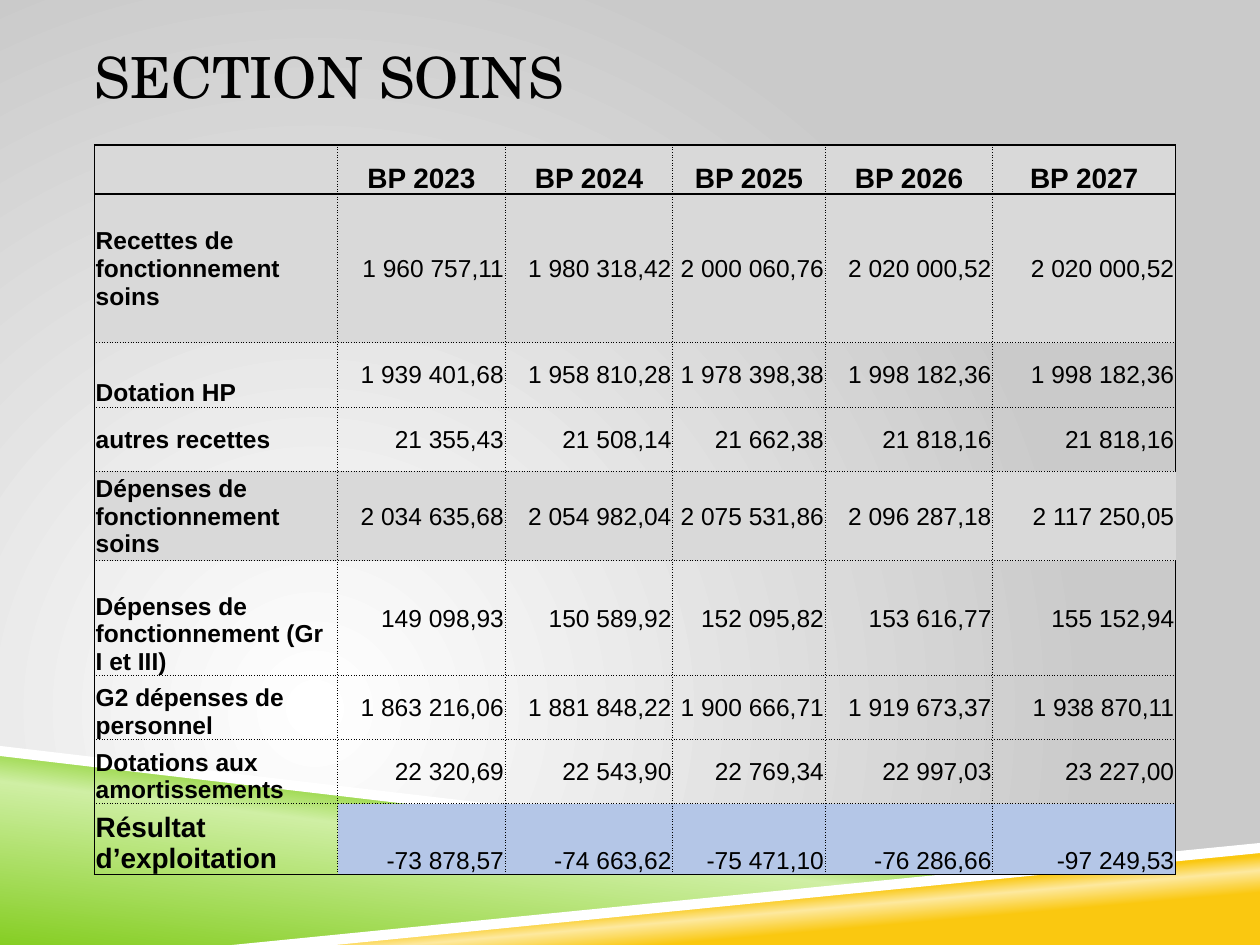
from lxml import etree
from pptx import Presentation
from pptx import util as u
from pptx.dml.color import RGBColor
from pptx.enum import text
from pptx.oxml import ns

COLORS = {
    "ink": "000000", "white": "FFFFFF", "edge": "CACACA",
    "green": "86CE24", "light_green": "CFEFA4",
    "gold": "FAC810", "light_gold": "FDE99F",
    "total": "D9D9D9", "result": "B4C6E7",
}
ANCHORS = {"m": text.MSO_ANCHOR.MIDDLE, "b": text.MSO_ANCHOR.BOTTOM}
ALIGN = text.PP_ALIGN

GREEN_STOPS = [(0, "green"), (52, "light_green"), (66, "green")]
GOLD_STOPS = [(28, "gold"), (40, "light_gold"), (48, "gold")]
GREEN_BAND = [(0, 5.97), (7.92, 6.92), (2, 7.5), (0, 7.5)]
GOLD_BAND = [(1.98, 7.5), (10, 6.72), (10, 7.5)]
WHITE_STRIPES = [
    [(0, 5.92), (0, 6), (7.9, 6.93), (8.32, 6.9)],
    [(10, 6.69), (1.84, 7.5), (2.66, 7.5), (10, 6.77)],
]

COL_WIDTHS = [1.93, 1.33, 1.33, 1.21, 1.33, 1.45]
YEARS = ["BP 2023", "BP 2024", "BP 2025", "BP 2026", "BP 2027"]
# height, fill, label anchor, value anchor, label size, label, values
ROWS = [
    (1.18, "total", "m", "m", 14, "Recettes de fonctionnement soins",
     ["1 960 757,11", "1 980 318,42", "2 000 060,76", "2 020 000,52", "2 020 000,52"]),
    (0.51, None, "b", "m", 14, "Dotation HP",
     ["1 939 401,68", "1 958 810,28", "1 978 398,38", "1 998 182,36", "1 998 182,36"]),
    (0.51, None, "m", "m", 14, "autres recettes",
     ["21 355,43", "21 508,14", "21 662,38", "21 818,16", "21 818,16"]),
    (0.51, "total", "m", "m", 14, "Dépenses de fonctionnement soins",
     ["2 034 635,68", "2 054 982,04", "2 075 531,86", "2 096 287,18", "2 117 250,05"]),
    (0.91, None, "b", "m", 14, "Dépenses de fonctionnement (Gr I et III)",
     ["149 098,93", "150 589,92", "152 095,82", "153 616,77", "155 152,94"]),
    (0.51, None, "b", "m", 14, "G2 dépenses de personnel",
     ["1 863 216,06", "1 881 848,22", "1 900 666,71", "1 919 673,37", "1 938 870,11"]),
    (0.51, None, "b", "m", 14, "Dotations aux amortissements",
     ["22 320,69", "22 543,90", "22 769,34", "22 997,03", "23 227,00"]),
    (0.56, "result", "b", "b", 16, "Résultat d’exploitation",
     ["-73 878,57", "-74 663,62", "-75 471,10", "-76 286,66", "-97 249,53"]),
]
OPEN_EDGE_ROW = 4


def rgb(name):
    return RGBColor.from_string(COLORS[name])


def sub(parent, tag, **attrs):
    return etree.SubElement(parent, ns.qn(tag), **{k: str(v) for k, v in attrs.items()})


def set_gradient(fill, root, stops, angle=None, focus=None):
    fill.solid()
    solid = next(root.iter(ns.qn("a:solidFill")))
    grad = etree.Element(ns.qn("a:gradFill"), rotWithShape="1")
    stop_list = sub(grad, "a:gsLst")
    for position, name in stops:
        stop = sub(stop_list, "a:gs", pos=position * 1000)
        sub(stop, "a:srgbClr", val=COLORS[name])
    if focus:
        circle = sub(grad, "a:path", path="circle")
        sub(circle, "a:fillToRect", **{k: v * 1000 for k, v in zip("ltrb", focus)})
    else:
        sub(grad, "a:lin", ang=angle * 60000, scaled=0)
    solid.getparent().replace(solid, grad)


def add_polygon(s, points):
    start, *rest = [(u.Inches(x), u.Inches(y)) for x, y in points]
    builder = s.shapes.build_freeform(*start)
    builder.add_line_segments(rest, close=True)
    sp = builder.convert_to_shape()
    sp.shadow.inherit = False
    sp.line.fill.background()
    return sp


def add_decor(s):
    for points, stops, angle in [(GREEN_BAND, GREEN_STOPS, 277), (GOLD_BAND, GOLD_STOPS, 265)]:
        sp = add_polygon(s, points)
        set_gradient(sp.fill, sp.element.spPr, stops, angle)
    for points in WHITE_STRIPES:
        sp = add_polygon(s, points)
        sp.fill.solid()
        sp.fill.fore_color.rgb = rgb("white")


def add_run(p, content, size, font, bold=False):
    r = p.add_run()
    r.text = content
    r.font.size, r.font.name, r.font.bold = u.Pt(size), font, bold
    r.font.color.rgb = rgb("ink")


def add_title(s):
    sp = s.shapes.add_textbox(u.Inches(0.75), u.Inches(0.3), u.Inches(8.5), u.Inches(0.61))
    tf = sp.text_frame
    tf.word_wrap = True
    tf.vertical_anchor = ANCHORS["m"]
    tf.margin_left = tf.margin_right = 0
    add_run(tf.paragraphs[0], "SECTION SOINS", 32.4, "TeX Gyre Schola")


def set_borders(cell, row, col):
    last_row, last_col = len(ROWS), len(YEARS)
    solid = {"L": col == 0, "R": col == last_col,
             "T": row <= 1, "B": row in (0, last_row)}
    for side, is_solid in solid.items():
        ln = sub(cell._tc.get_or_add_tcPr(), f"a:ln{side}", w=12700 if is_solid else 6350)
        if side == "R" and (row, col) == (OPEN_EDGE_ROW, last_col):
            sub(ln, "a:noFill")
            continue
        sub(sub(ln, "a:solidFill"), "a:srgbClr", val=COLORS["ink"])
        sub(ln, "a:prstDash", val="solid" if is_solid else "dot")


def fill_cell(cell, content, size, bold, align, anchor, fill):
    cell.margin_left = cell.margin_right = cell.margin_top = u.Inches(0.01)
    cell.margin_bottom = 0
    cell.vertical_anchor = ANCHORS[anchor]
    p = cell.text_frame.paragraphs[0]
    p.alignment = align
    if content:
        add_run(p, content, size, "Arial", bold)
    else:
        p.font.size = u.Pt(size)
    if fill:
        cell.fill.solid()
        cell.fill.fore_color.rgb = rgb(fill)
    else:
        cell.fill.background()


def add_budget_table(s):
    frame = s.shapes.add_table(len(ROWS) + 1, len(COL_WIDTHS), u.Inches(0.75),
                               u.Inches(1.15), u.Inches(8.58), u.Inches(5.8))
    table = frame.table
    table.first_row = table.horz_banding = False
    for column, width in zip(table.columns, COL_WIDTHS):
        column.width = u.Inches(width)
    for row, height in zip(table.rows, [0.39] + [item[0] for item in ROWS]):
        row.height = u.Inches(height)
    for i, row in enumerate(table.rows):
        for j, cell in enumerate(row.cells):
            set_borders(cell, i, j)
    for j, year in enumerate([""] + YEARS):
        fill_cell(table.cell(0, j), year, 16, True, ALIGN.CENTER, "b", "total")
    for i, (_, fill, label_anchor, anchor, size, label, values) in enumerate(ROWS, 1):
        label_fill = None if fill == "result" else fill
        fill_cell(table.cell(i, 0), label, size, True, ALIGN.LEFT, label_anchor, label_fill)
        for j, value in enumerate(values, 1):
            fill_cell(table.cell(i, j), value, 14, False, ALIGN.RIGHT, anchor, fill)


def main():
    """Build the care section budget slide."""
    prs = Presentation()
    prs.slide_width, prs.slide_height = u.Inches(10), u.Inches(7.5)
    s = prs.slides.add_slide(prs.slide_layouts[6])
    set_gradient(s.background.fill, s.element, [(0, "white"), (100, "edge")],
                 focus=(50, 100, 100, 50))
    add_decor(s)
    add_title(s)
    add_budget_table(s)
    prs.save("out.pptx")


if __name__ == "__main__":
    main()
